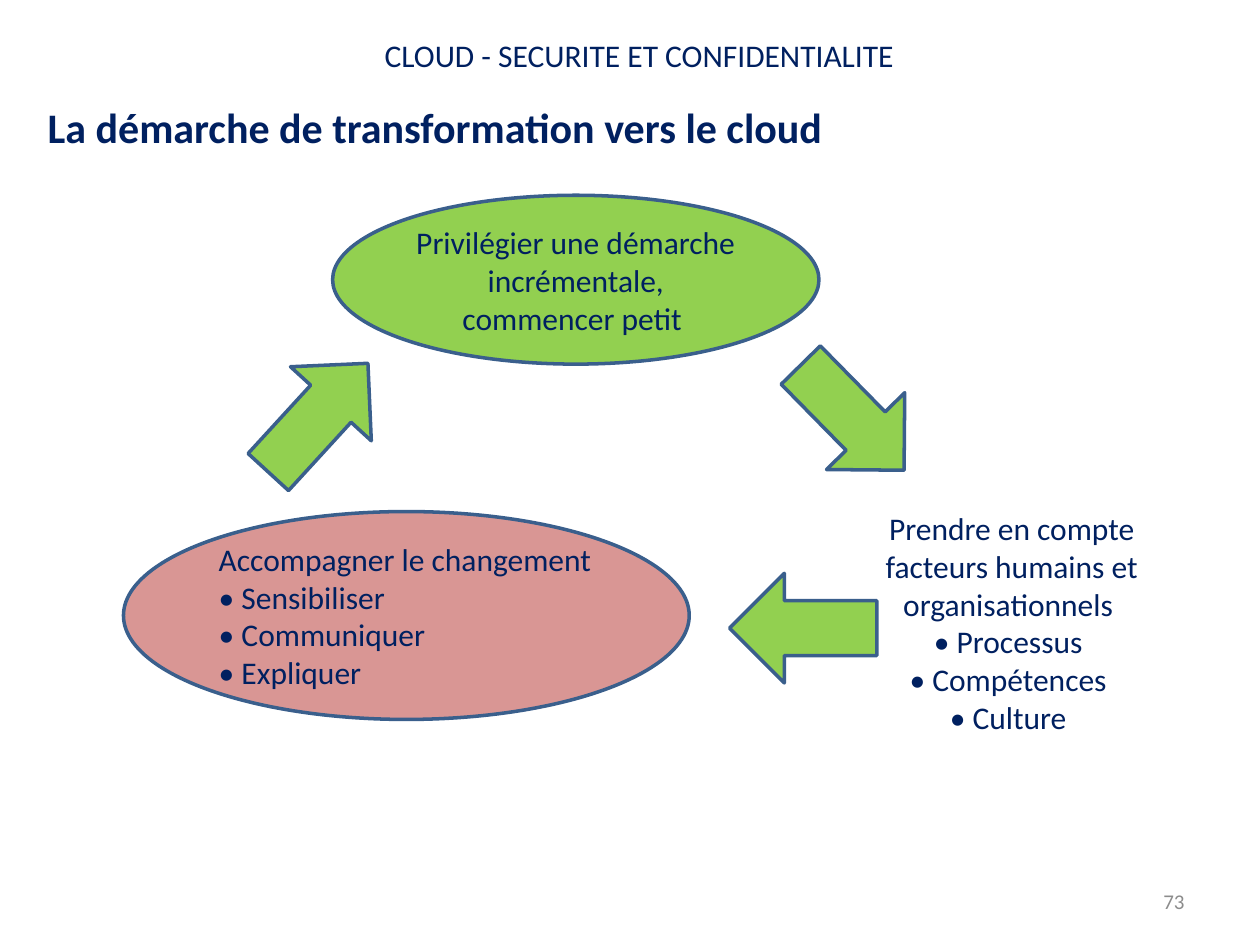
from pptx import Presentation, util as u
from pptx.dml import color
from pptx.enum import shapes, text

deck = Presentation()
deck.slide_width, deck.slide_height = u.Inches(10), u.Inches(7.5)
page = deck.slides.add_slide(deck.slide_layouts[6])
col, row = deck.slide_width / 100, deck.slide_height / 75
form, side, hold = shapes.MSO_SHAPE, text.PP_ALIGN, text.MSO_ANCHOR
navy, green, rose, edge, grey = "002060", "92D050", "D99694", "3A5F8C", "8C8C8C"


def paint(part, tone):
    if hasattr(part, "solid"):
        part.solid()
        part.fore_color.rgb = color.RGBColor.from_string(tone)
    else:
        part.color.rgb = color.RGBColor.from_string(tone)


def write(words, at, kind=None, fill=None, turn=0, size=18, tone=navy,
          bold=False, align=side.LEFT, anchor=hold.MIDDLE):
    x, y, w, h = at
    area = [int(n) for n in (x * col, y * row, w * col, h * row)]
    if kind is None:
        item = page.shapes.add_textbox(*area)
    else:
        item = page.shapes.add_shape(kind, *area)
        item.shadow.inherit = False
        item.rotation = turn
        paint(item.fill, fill)
        paint(item.line, edge)
        item.line.width = u.Pt(2)
    if not words:
        return
    frame = item.text_frame
    frame.word_wrap = True
    frame.vertical_anchor = anchor
    frame.text = words
    for para in frame.paragraphs:
        para.alignment = align
        for run in para.runs:
            run.font.name = "Calibri"
            run.font.size = u.Pt(size)
            run.font.bold = bold
            paint(run.font, tone)


write("La démarche de transformation vers le cloud", (2.8, 7.6, 72.1, 5),
      size=24, bold=True, anchor=hold.TOP)
write("CLOUD - SECURITE ET CONFIDENTIALITE", (27.9, 2.4, 45.7, 3.9),
      align=side.CENTER)
write("Privilégier une démarche incrémentale, commencer petit ",
      (26.4, 15.5, 38.6, 13.4), kind=form.OVAL, fill=green, align=side.CENTER)
write("Accompagner le changement\n• Sensibiliser\n• Communiquer\n• Expliquer",
      (9.8, 40.6, 44.9, 16.5), kind=form.OVAL, fill=rose)
write("Prendre en compte facteurs humains et organisationnels \n"
      "• Processus \n• Compétences \n• Culture ",
      (67.3, 39.9, 26, 19.2), align=side.CENTER, anchor=hold.TOP)

for x, y, turn in [(61.8, 28.8, 45.5), (57.9, 45.5, 180), (19.4, 28.8, 312.5)]:
    write("", (x, y, 11.7, 8.7), kind=form.RIGHT_ARROW, fill=green, turn=turn)

write("73", (71.7, 69.5, 23.3, 4), size=12, tone=grey, align=side.RIGHT)

deck.save("out.pptx")
